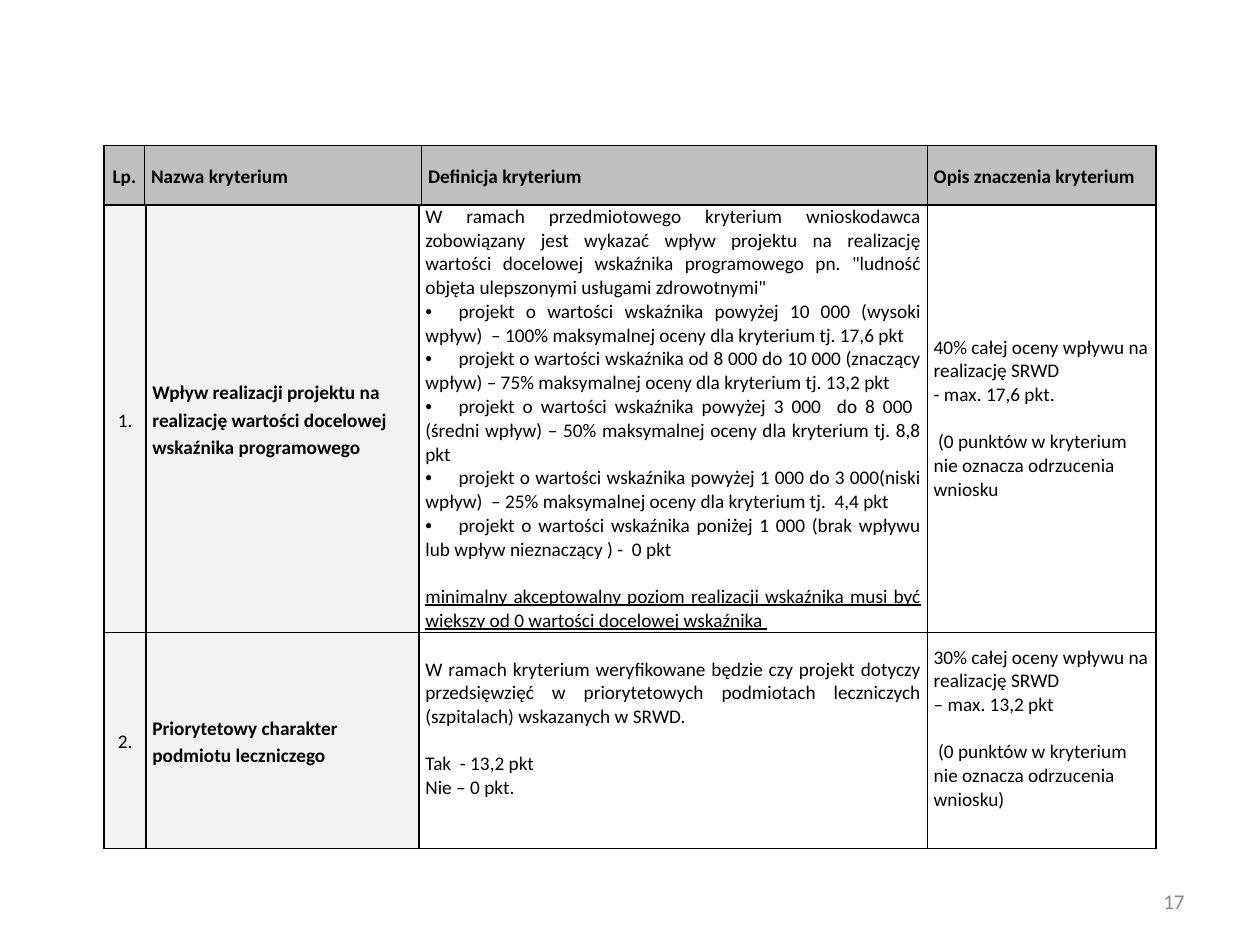
from lxml.etree import SubElement
from pptx import Presentation
from pptx.dml.color import RGBColor
from pptx.enum.text import MSO_ANCHOR, PP_ALIGN
from pptx.oxml.ns import qn
from pptx.util import Pt

HUES = {"head": "BFBFBF", "side": "F2F2F2", "body": "FFFFFF", "ink": "000000", "page": "898989"}
LEFT, CENTER, BOTH = PP_ALIGN.LEFT, PP_ALIGN.CENTER, PP_ALIGN.JUSTIFY
LOOSE = {"line_spacing": 1.15, "space_after": Pt(10)}
GAP = {"space_before": Pt(13.4)}
TEXT = {"name": "Calibri", "size": Pt(11)}
BOLD = {**TEXT, "bold": True}
KINDS = {
    "head": ({**LOOSE, "alignment": LEFT}, BOLD),
    "num": ({**LOOSE, "alignment": CENTER}, TEXT),
    "headnum": ({**LOOSE, "alignment": CENTER}, BOLD),
    "both": ({"alignment": BOTH}, TEXT),
    "dot": ({"alignment": BOTH}, TEXT),
    "bothgap": ({**GAP, "alignment": BOTH}, TEXT),
    "under": ({**GAP, "alignment": BOTH}, {**TEXT, "underline": True}),
    "left": ({"alignment": LEFT}, TEXT),
    "leftgap": ({**GAP, "alignment": LEFT}, TEXT),
}
HEAD = [[
    [("headnum", "Lp.")],
    [("head", "Nazwa kryterium")],
    [("head", "Definicja kryterium")],
    [("head", "Opis znaczenia kryterium")],
]]
BODY = [
    [
        [("num", "1.")],
        [("head", "Wpływ realizacji projektu na realizację wartości docelowej wskaźnika programowego")],
        [
            ("both", "W ramach przedmiotowego kryterium wnioskodawca zobowiązany jest wykazać wpływ projektu "
                     "na realizację wartości docelowej wskaźnika programowego pn. "
                     "\"ludność objęta ulepszonymi usługami zdrowotnymi\""),
            ("dot", "projekt o wartości wskaźnika powyżej 10 000 (wysoki wpływ)  – 100% maksymalnej "
                    "oceny dla kryterium tj. 17,6 pkt "),
            ("dot", "projekt o wartości wskaźnika od 8 000 do 10 000 (znaczący wpływ) – 75% maksymalnej "
                    "oceny dla kryterium tj. 13,2 pkt "),
            ("dot", "projekt o wartości wskaźnika powyżej 3 000  do 8 000  (średni wpływ) – 50% maksymalnej "
                    "oceny dla kryterium tj. 8,8 pkt "),
            ("dot", "projekt o wartości wskaźnika powyżej 1 000 do 3 000(niski wpływ)  – 25% maksymalnej "
                    "oceny dla kryterium tj.  4,4 pkt"),
            ("dot", "projekt o wartości wskaźnika poniżej 1 000 (brak wpływu lub wpływ nieznaczący ) -  0 pkt"),
            ("under", "minimalny akceptowalny poziom realizacji wskaźnika musi być większy od 0 "
                      "wartości docelowej wskaźnika "),
        ],
        [
            ("left", "40% całej oceny wpływu na realizację SRWD"),
            ("left", "- max. 17,6 pkt."),
            ("leftgap", " (0 punktów w kryterium nie oznacza odrzucenia wniosku"),
        ],
    ],
    [
        [("num", "2.")],
        [("head", "Priorytetowy charakter podmiotu leczniczego")],
        [
            ("both", "W ramach kryterium weryfikowane będzie czy projekt dotyczy przedsięwzięć "
                     "w priorytetowych podmiotach leczniczych (szpitalach) wskazanych w SRWD. "),
            ("bothgap", "Tak  - 13,2 pkt "),
            ("both", "Nie – 0 pkt. "),
        ],
        [
            ("left", "30% całej oceny wpływu na realizację SRWD"),
            ("left", "– max. 13,2 pkt"),
            ("leftgap", " (0 punktów w kryterium nie oznacza odrzucenia wniosku)"),
        ],
    ],
]


def apply(item, values):
    """Set each named value on the item."""
    for name, value in values.items():
        setattr(item, name, value)


def add_dot(para):
    """Give the paragraph a bullet and a tab stop after it."""
    props = para._p.get_or_add_pPr()
    props.set("marL", "0")
    props.set("indent", "0")
    SubElement(props, qn("a:buFont"), typeface="Arial")
    SubElement(props, qn("a:buChar"), char="•")
    tabs = SubElement(props, qn("a:tabLst"))
    SubElement(tabs, qn("a:tab"), pos=str(Pt(19)), algn="l")


def write(frame, parts, hue="ink"):
    """Write (kind, text) paragraphs into a text frame."""
    for i, (kind, text) in enumerate(parts):
        para = frame.paragraphs[0] if i == 0 else frame.add_paragraph()
        if kind == "dot":
            add_dot(para)
            text = "\t" + text
        layout, font = KINDS[kind]
        apply(para, layout)
        run = para.add_run()
        run.text = text
        apply(run.font, font)
        run.font.color.rgb = RGBColor.from_string(HUES[hue])


def frame_cell(cell):
    """Draw a thin line on the four sides of a cell."""
    props = cell._tc.get_or_add_tcPr()
    for i, side in enumerate(("lnL", "lnR", "lnT", "lnB")):
        line = props.makeelement(qn("a:" + side), {"w": str(Pt(1))})
        fill = SubElement(line, qn("a:solidFill"))
        SubElement(fill, qn("a:srgbClr"), val=HUES["ink"])
        props.insert(i, line)


def add_grid(slide, box, cols, rows, data, fills, low):
    """Place a table in the box; low lists the bottom inset of each row's text columns."""
    shape = slide.shapes.add_table(len(rows), len(cols), *map(Pt, box))
    table = shape.table
    apply(table, {"first_row": False, "horz_banding": False})
    for col, width in zip(table.columns, cols):
        col.width = Pt(width)
    for r, (row, high) in enumerate(zip(table.rows, rows)):
        row.height = Pt(high)
        for c, cell in enumerate(row.cells):
            apply(cell, {
                "margin_left": Pt(3.6), "margin_right": Pt(3.6), "margin_top": 0,
                "margin_bottom": Pt(low[r] if c > 1 else 0),
                "vertical_anchor": MSO_ANCHOR.MIDDLE,
            })
            cell.fill.solid()
            cell.fill.fore_color.rgb = RGBColor.from_string(HUES[fills[c]])
            frame_cell(cell)
            write(cell.text_frame, data[r][c])


def add_page(slide, box, text):
    """Place the page number at the right of the box."""
    frame = slide.shapes.add_textbox(*map(Pt, box)).text_frame
    apply(frame, {"word_wrap": True, "vertical_anchor": MSO_ANCHOR.MIDDLE})
    write(frame, [("left", text)], "page")
    para = frame.paragraphs[0]
    para.alignment = PP_ALIGN.RIGHT
    para.runs[0].font.size = Pt(12)


def main():
    """Build the slide and save it."""
    deck = Presentation()
    apply(deck, {"slide_width": Pt(720), "slide_height": Pt(540)})
    slide = deck.slides.add_slide(deck.slide_layouts[6])
    add_page(slide, (516, 500.5, 168, 28.8), "17")
    left, top, wide, high = 59.5, 83, 601, 34
    add_grid(slide, (left, top, wide, high), (23.2, 158.3, 289, 130.5), (high,),
             HEAD, ["head"] * 4, (0,))
    rows = (244.4, 123.4)
    add_grid(slide, (left, top + high, wide, sum(rows)), (24, 156, 290.5, 130.5), rows,
             BODY, ["side", "side", "body", "body"], (0, 13.4))
    deck.save("out.pptx")


if __name__ == "__main__":
    main()
